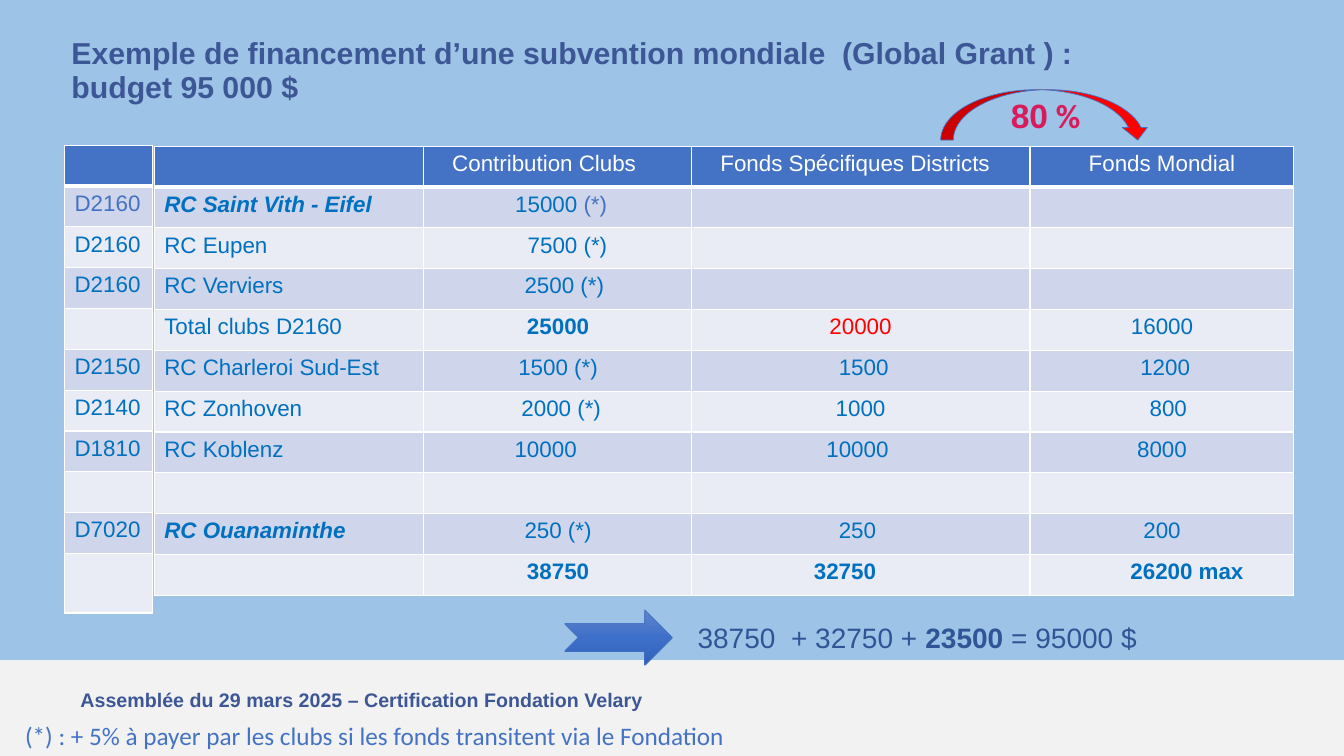
import copy
import pptx
import pptx.util
import pptx.dml.color
import pptx.enum.shapes
import pptx.enum.text
import pptx.oxml
import pptx.oxml.ns
from pptx.util import Inches, Pt

THEME = {
    "sky": "9DC3E6", "band": "F2F2F2", "navy": "3D5695", "blue": "4472C4",
    "text": "0070C0", "sum": "2F5597", "red": "FF0000", "pink": "D91B5C",
    "white": "FFFFFF", "odd": "CFD5EA", "even": "E9EBF5",
    "shades": ["6183CB", "3E70CA", "3062BB"],
    "font": "Arial", "alt": "Calibri",
    "title": 21.6, "cell": 16, "foot": 14, "note": 18, "total": 20, "rate": 24,
}

TITLE = "Exemple de financement d’une subvention mondiale  (Global Grant ) : budget 95 000 $"
FOOT = "Assemblée du 29 mars 2025 – Certification Fondation Velary"
NOTE = "(*) : + 5% à payer par les clubs si les fonds transitent via le Fondation"
TOTAL = [("38750  + 32750 + ", False), ("23500", True), (" = 95000 $", False)]

# Cell: (text, indent in spaces, marks); marks: b bold, i italic, l left, r red, p pale
NONE = ("", 0, "")
DISTRICTS = [NONE, ("D2160", 0, "lp"), ("D2160", 0, "l"), ("D2160", 0, "l"), NONE,
             ("D2150", 0, "l"), ("D2140", 0, "l"), ("D1810", 0, "l"), NONE,
             ("D7020", 0, "l"), NONE]
CLUBS = [NONE, ("RC Saint Vith - Eifel", 0, "lbi"), ("RC Eupen", 0, "l"),
         ("RC Verviers", 0, "l"), ("Total clubs D2160", 0, "l"),
         ("RC Charleroi Sud-Est", 0, "l"), ("RC Zonhoven", 0, "l"),
         ("RC Koblenz", 0, "l"), NONE, ("RC Ouanaminthe", 0, "lbi"), NONE]
GIFTS = [("Contribution Clubs", 3, "l"), ("15000 (*)", 1, ""), ("7500 (*)", 3, ""),
         ("2500 (*)", 2, ""), ("25000", 0, "b"), ("1500 (*)", 0, ""),
         ("2000 (*)", 1, ""), ("10000", 13, "l"), NONE, ("250 (*)", 0, ""),
         ("38750", 0, "b")]
FUNDS = [("Fonds Spécifiques Districts", 3, "l"), NONE, NONE, NONE,
         ("20000", 0, "r"), ("1500", 1, ""), ("1000", 0, ""), ("10000", 20, "l"),
         NONE, ("250", 22, "l"), ("32750", 18, "lb")]
WORLD = [("Fonds Mondial", 0, ""), NONE, NONE, NONE, ("16000", 0, ""),
         ("1200", 1, ""), ("800", 2, ""), ("8000", 0, ""), NONE, ("200", 0, ""),
         ("26200 max", 8, "b")]
# left, top, width, last row height, cells
ROW = 4.46 / 11
TABLES = [
    (0.64, 1.44, 0.87, 0.59, DISTRICTS),
    (1.53, 1.45, 2.67, ROW, CLUBS),
    (4.2, 1.45, 2.67, ROW, GIFTS),
    (6.86, 1.45, 3.35, ROW, FUNDS),
    (10.22, 1.45, 2.61, ROW, WORLD),
]
SPACE = 0.0618  # width of one space at cell size, inches

SHAPE = pptx.enum.shapes.MSO_SHAPE
ALIGN = pptx.enum.text.PP_ALIGN
ANCHOR = pptx.enum.text.MSO_ANCHOR
FIT = pptx.enum.text.MSO_AUTO_SIZE


def color(name):
    return pptx.dml.color.RGBColor.from_string(THEME.get(name, name))


def style(font, size, tone, bold=False, face="font"):
    font.size, font.name, font.bold = Pt(THEME[size]), THEME[face], bold
    font.color.rgb = color(tone)


def add_text(slide, box, wrap=True):
    frame = slide.shapes.add_textbox(*map(Inches, box)).text_frame
    frame.word_wrap = wrap
    frame.auto_size = FIT.SHAPE_TO_FIT_TEXT
    return frame


def add_shape(slide, kind, box, fill=None, line=None):
    shape = slide.shapes.add_shape(kind, *map(Inches, box))
    shape.shadow.inherit = False
    if fill:
        shape.fill.solid()
        shape.fill.fore_color.rgb = color(fill)
    if line:
        shape.line.color.rgb = color(line)
        shape.line.width = Pt(0.5)
    else:
        shape.line.fill.background()
    return shape


def add_edges(cell, head):
    """Draw white cell borders, with a thick one under the head row."""
    props = cell._tc.get_or_add_tcPr()
    for spot, side in enumerate(("lnL", "lnR", "lnT", "lnB")):
        width = Pt(3 if head and side == "lnB" else 1)
        props.insert(spot, pptx.oxml.parse_xml(
            f'<a:{side} {pptx.oxml.ns.nsdecls("a")} w="{width}"><a:solidFill>'
            f'<a:srgbClr val="{THEME["white"]}"/></a:solidFill></a:{side}>'))


def fill_cell(cell, row, text, pad, marks):
    cell.fill.solid()
    cell.fill.fore_color.rgb = color("blue" if row == 0 else "odd" if row % 2 else "even")
    add_edges(cell, row == 0)
    para = cell.text_frame.paragraphs[0]
    para.alignment = ALIGN.LEFT if "l" in marks else ALIGN.CENTER
    if pad:
        para._p.get_or_add_pPr().set("marL", str(Inches(pad * SPACE)))
    tone = "white" if row == 0 else "red" if "r" in marks else "blue" if "p" in marks else "text"
    style(para.font, "cell", tone, "b" in marks)
    para.font.italic = "i" in marks
    if text == "15000 (*)":
        para.add_run().text = "15000 "
        star = para.add_run()
        star.text = "(*)"
        star.font.color.rgb = color("blue")
    elif text:
        para.add_run().text = text


def add_column(slide, left, top, width, last, cells):
    size = len(cells)
    high = ROW * (size - 1) + last
    table = slide.shapes.add_table(size, 1, *map(Inches, (left, top, width, high))).table
    table.first_row = table.horz_banding = False
    for row, item in enumerate(cells):
        table.rows[row].height = Inches(last if row == size - 1 else ROW)
        fill_cell(table.cell(row, 0), row, *item)


def add_title(slide):
    frame = add_text(slide, (0.61, 0.51, 10.61, 0.94))
    frame.auto_size = FIT.NONE
    frame.vertical_anchor = ANCHOR.BOTTOM
    frame.margin_top, frame.margin_bottom = 0, Inches(0.4)
    para = frame.paragraphs[0]
    para.text, para.line_spacing = TITLE, 0.95
    style(para.font, "title", "navy", True)


def add_rate(slide):
    arc = add_shape(slide, SHAPE.CURVED_DOWN_ARROW, (9.33, 0.89, 2.08, 0.5), "red", "blue")
    arc.text_frame.vertical_anchor = ANCHOR.MIDDLE
    para = arc.text_frame.paragraphs[0]
    para.alignment = ALIGN.CENTER
    for text, face in (("80", "font"), (" %", "alt")):
        run = para.add_run()
        run.text = text
        style(run.font, "rate", "pink", True, face)


def add_total(slide):
    para = add_text(slide, (6.82, 6.11, 5.02, 0.44)).paragraphs[0]
    style(para.font, "total", "sum")
    for text, bold in TOTAL:
        run = para.add_run()
        run.text, run.font.bold = text, bold
    arrow = add_shape(slide, SHAPE.NOTCHED_RIGHT_ARROW, (5.6, 6.05, 1.07, 0.55), line="blue")
    arrow.fill.gradient()
    arrow.fill.gradient_angle = 270
    first = arrow.fill.gradient_stops[0]._gs
    first.addnext(copy.deepcopy(first))
    for step, (stop, tone) in enumerate(zip(arrow.fill.gradient_stops, THEME["shades"])):
        stop.position = step / 2
        stop.color.rgb = color(tone)


def main():
    deck = pptx.Presentation()
    deck.slide_width, deck.slide_height = Inches(13.33), Inches(7.5)
    slide = deck.slides.add_slide(deck.slide_layouts[6])
    slide.background.fill.solid()
    slide.background.fill.fore_color.rgb = color("sky")
    add_shape(slide, SHAPE.RECTANGLE, (0, 6.55, 13.33, 0.95), "band")
    foot = add_text(slide, (0.7, 6.78, 6.24, 0.34)).paragraphs[0]
    foot.text = FOOT
    style(foot.font, "foot", "navy", True)
    add_title(slide)
    for column in TABLES:
        add_column(slide, *column)
    add_rate(slide)
    add_total(slide)
    note = add_text(slide, (0.15, 7.1, 7.28, 0.4), False).paragraphs[0]
    note.text = NOTE
    style(note.font, "note", "blue", face="alt")
    deck.save("out.pptx")


if __name__ == "__main__":
    main()
